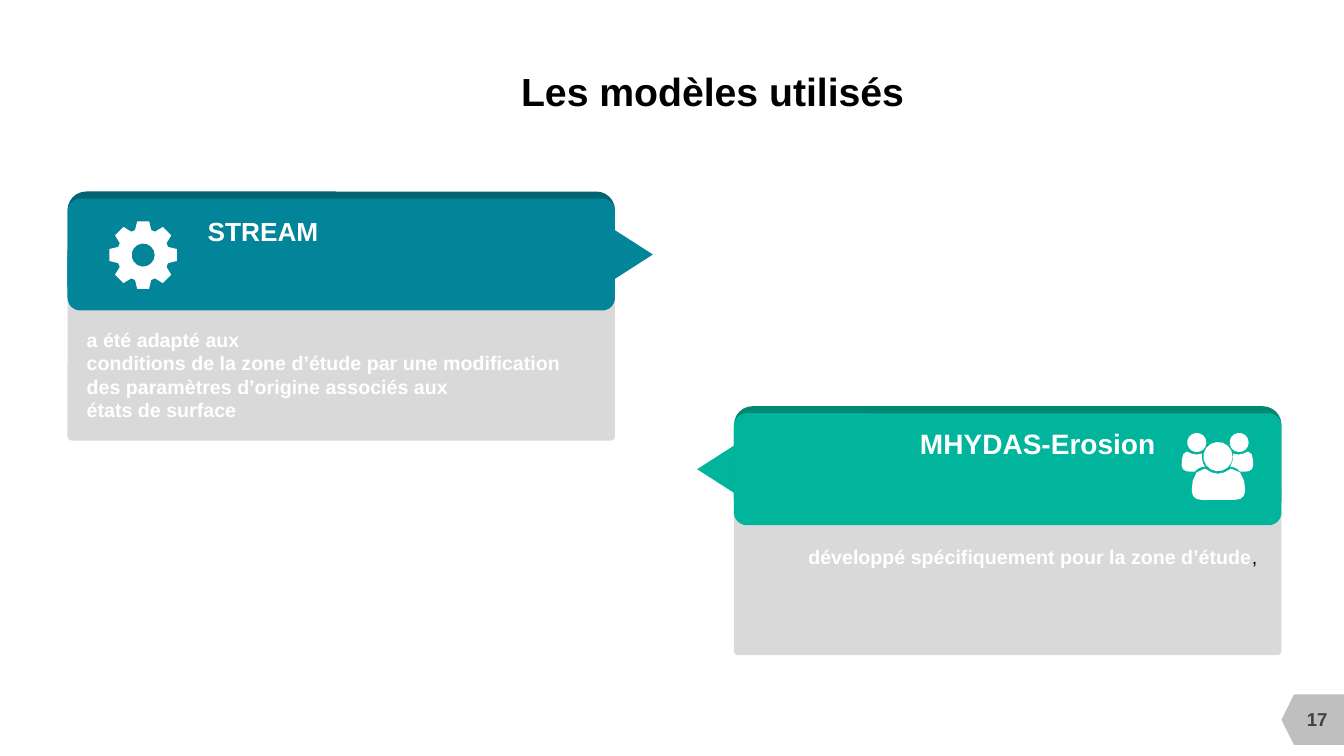
"""Slide 17: the two erosion models, each on its own card."""
import math
from pptx import Presentation, util as u
from pptx.dml.color import RGBColor
from pptx.enum import shapes, text

PX = 9144
FONT = "Arial"
HUES = {
    "ink": "000000", "white": "FFFFFF", "panel": "D9D9D9",
    "tab": "BFBFBF", "num": "404040",
    "teal": "028599", "deep": "026473",
    "mint": "01B59C", "pine": "018875",
}
KIND = shapes.MSO_SHAPE
SIDE = text.PP_ALIGN
MID = text.MSO_ANCHOR.MIDDLE
TOP = text.MSO_ANCHOR.TOP

SHOULDER = [(13, 38), (8, 38), (4, 38, 0, 36, 0, 32),
            (0, 28, 0, 18, 5, 18), (6, 18, 10, 21, 15, 21),
            (20, 20), (20, 23), (20, 26, 21, 30, 23, 33),
            (19, 33, 15, 35, 13, 38)]
TORSO = [(52, 66), (20, 66), (14, 66, 10, 63, 10, 57),
         (10, 48, 12, 35, 23, 35), (25, 35, 28, 40, 36, 40),
         (43, 40, 48, 35, 49, 35), (61, 35, 63, 48, 63, 57),
         (63, 63, 59, 66, 52, 66)]


def px(*nums):
    """Turn px lengths into EMU."""
    return [u.Emu(round(n * PX)) for n in nums]


def hue(name):
    """Give the named colour."""
    return RGBColor.from_string(HUES[name])


def paint(shape, name):
    """Fill a shape flat, without line or shadow."""
    shape.shadow.inherit = False
    shape.fill.solid()
    shape.fill.fore_color.rgb = hue(name)
    shape.line.fill.background()


def block(host, kind, box, name, round_by=None, turn=0):
    """Add one preset shape."""
    shape = host.shapes.add_shape(kind, *px(*box))
    paint(shape, name)
    shape.rotation = turn
    if round_by is not None:
        shape.adjustments[0] = round_by


def label(slide, box, lines, size, name, align=SIDE.LEFT, wrap=False,
          pad=0, anchor=MID, grow=True):
    """Add a bold text box and return its frame."""
    frame = slide.shapes.add_textbox(*px(*box)).text_frame
    frame.word_wrap = wrap
    frame.vertical_anchor = anchor
    if grow:
        frame.auto_size = text.MSO_AUTO_SIZE.SHAPE_TO_FIT_TEXT
    frame.margin_left, frame.margin_right = px(2 * pad, 2 * pad)
    frame.margin_top, frame.margin_bottom = px(pad, pad)
    frame.text = "\n".join(lines)
    for para in frame.paragraphs:
        para.alignment = align
        font = para.font
        font.name, font.size, font.bold = FONT, u.Pt(size), True
        font.color.rgb = hue(name)
    return frame


def ring(x, y, r):
    """Give the points of a circle."""
    return [(x + r * math.cos(math.radians(a)), y + r * math.sin(math.radians(a)))
            for a in range(0, 360, 24)]


def curve(segs):
    """Sample a chain of straight and cubic segments."""
    pts = [segs[0]]
    for seg in segs[1:]:
        if len(seg) == 2:
            pts.append(seg)
            continue
        knots = [pts[-1], seg[:2], seg[2:4], seg[4:]]
        for step in (1, 2, 3):
            t = step / 3
            mix = [(1 - t) ** 3, 3 * t * (1 - t) ** 2, 3 * t * t * (1 - t), t ** 3]
            pts.append(tuple(sum(m * k[i] for m, k in zip(mix, knots))
                             for i in (0, 1)))
    return pts[:-1]


def outline(slide, left, top, loops, name):
    """Draw closed loops as one freeform."""
    loops = [[px(left + x, top + y) for x, y in loop] for loop in loops]
    form = slide.shapes.build_freeform(*loops[0][0], scale=1.0)
    for i, loop in enumerate(loops):
        if i:
            form.move_to(*loop[0])
        form.add_line_segments(loop[1:], close=True)
    paint(form.convert_to_shape(), name)


def gear(slide, left, top):
    """Draw an eight-tooth gear with a round hole."""
    teeth = [(34 + r * math.sin(math.radians(a)), 34 - r * math.cos(math.radians(a)))
             for mid in range(0, 360, 45)
             for r, a in ((26, mid - 18), (34, mid - 10),
                          (34, mid + 10), (26, mid + 18))]
    outline(slide, left, top, [teeth, ring(34, 34, 11.5)], "white")


def team(slide, left, top):
    """Draw three people side by side."""
    arm = curve(SHOULDER)
    loops = [arm, [(71 - x, y) for x, y in arm], curve(TORSO),
             ring(15, 9, 9.5), ring(57, 9, 9.5), ring(36, 23, 14.5)]
    outline(slide, left, top, loops, "white")


def card(slide, left, top, face, edge, flip=False):
    """Draw a panel with a coloured head and a side arrow."""
    wide, high = 543, 111
    block(slide, KIND.ROUNDED_RECTANGLE, (left, top + 82, wide, 165), "panel", 0.025)
    head = slide.shapes.add_group_shape()
    tip = -44 if flip else 520
    block(head, KIND.ISOSCELES_TRIANGLE, (left + tip, top + 36, 68, 53), face,
          turn=270 if flip else 90)
    block(head, KIND.ROUNDED_RECTANGLE, (left, top, wide, high), edge)
    block(head, KIND.ROUNDED_RECTANGLE, (left, top + 7, wide, high), face, 0.113)


def stream(slide, left, top):
    """Place the first model card."""
    card(slide, left, top, "teal", "deep")
    label(slide, (left + 139, top + 24, 111, 31), ["STREAM"], 18.7, "white")
    label(slide, (left + 19, top + 135, 502, 94),
          ["a été adapté aux",
           "conditions de la zone d’étude par une modification "
           "des paramètres d’origine associés aux",
           "états de surface"],
          14, "white", wrap=True, anchor=TOP)
    gear(slide, left + 41, top + 29)


def mhydas(slide, left, top):
    """Place the second model card."""
    card(slide, left, top, "mint", "pine", flip=True)
    label(slide, (left + 182, top + 20, 236, 34), ["MHYDAS-Erosion"], 20, "white",
          align=SIDE.RIGHT)
    frame = label(slide, (left + 17, top + 138, 502, 24),
                  ["développé spécifiquement pour la zone d’étude"], 14, "white",
                  align=SIDE.RIGHT, wrap=True, anchor=TOP)
    comma = frame.paragraphs[0].add_run()
    comma.text = ","
    comma.font.bold = False
    comma.font.color.rgb = hue("ink")
    team(slide, left + 444, top + 27)


def folio(slide, left, top):
    """Place the page number on its tab."""
    block(slide, KIND.FLOWCHART_OFFPAGE_CONNECTOR, (left + 4, top, 50, 62), "tab", turn=90)
    label(slide, (left, top + 10, 67, 40), ["17"], 13.3, "num", align=SIDE.CENTER,
          wrap=True, pad=5, grow=False)


def main():
    """Build and save the slide."""
    deck = Presentation()
    deck.slide_width, deck.slide_height = px(1333, 750)
    slide = deck.slides.add_slide(deck.slide_layouts[6])
    folio(slide, 1273, 683)
    stream(slide, 67, 190)
    mhydas(slide, 728, 403)
    label(slide, (507, 62, 416, 57), ["Les modèles utilisés"], 28, "ink", pad=5,
          anchor=TOP)
    deck.save("out.pptx")


if __name__ == "__main__":
    main()
